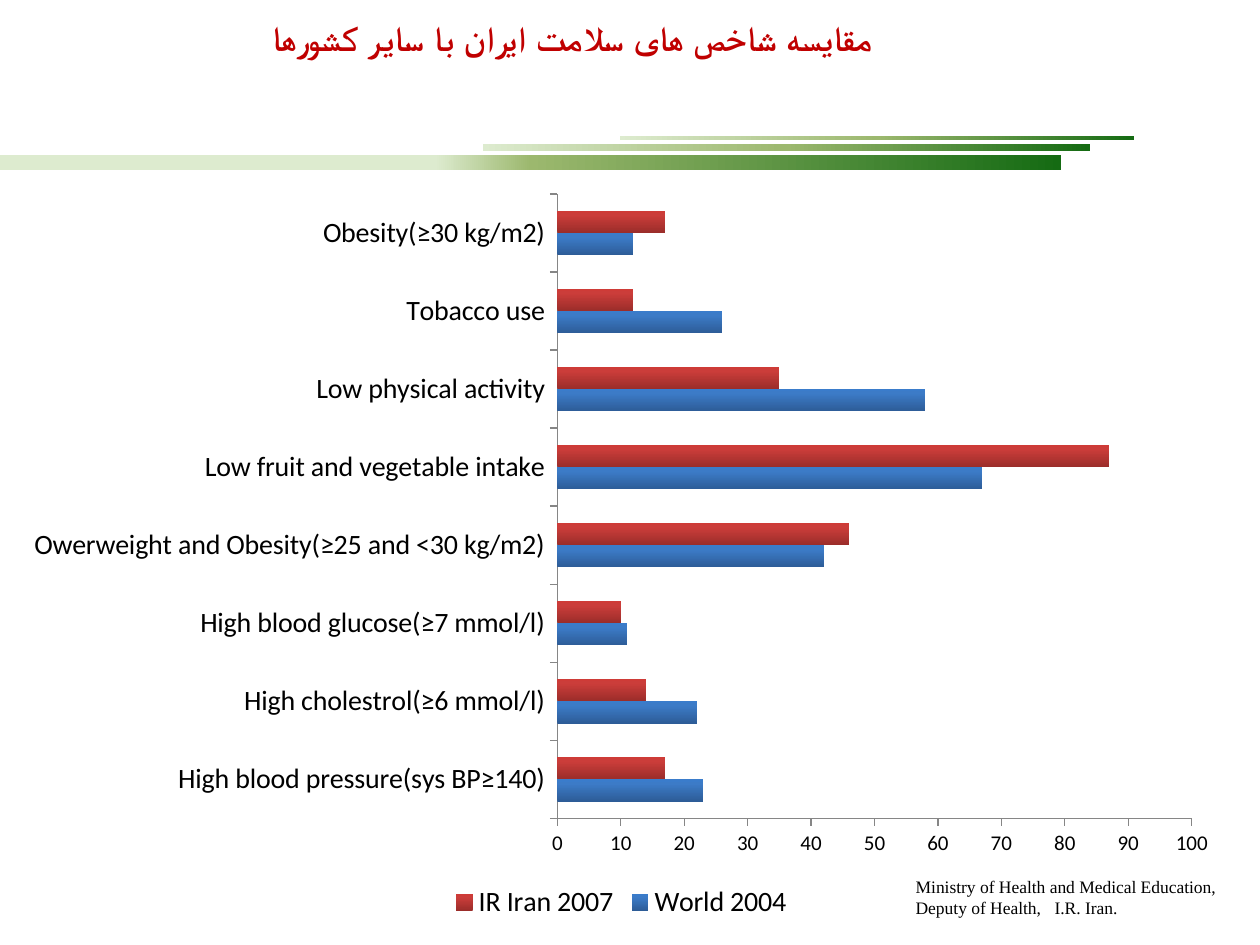
from pptx import Presentation
from pptx.chart.data import CategoryChartData
from pptx.dml.color import RGBColor
from pptx.enum.chart import XL_CHART_TYPE, XL_LEGEND_POSITION, XL_TICK_MARK
from pptx.enum.shapes import MSO_SHAPE
from pptx.enum.text import MSO_AUTO_SIZE, PP_ALIGN
from pptx.oxml import parse_xml
from pptx.oxml.ns import nsdecls
from pptx.util import Cm, Pt

BAR_CLUSTERED = XL_CHART_TYPE.BAR_CLUSTERED
LEGEND_BOTTOM = XL_LEGEND_POSITION.BOTTOM
TICK_OUTSIDE = XL_TICK_MARK.OUTSIDE
TICK_NONE = XL_TICK_MARK.NONE
RECTANGLE = MSO_SHAPE.RECTANGLE
GROW = MSO_AUTO_SIZE.SHAPE_TO_FIT_TEXT
LEFT, CENTER = PP_ALIGN.LEFT, PP_ALIGN.CENTER

COLORS = {
    "text": "000000", "title": "C00000", "axis": "868686",
    "pale": "DDEBCF", "olive": "9CB86E", "green": "156B13",
    "blue_dark": "2D5C97", "blue": "3C7BC7", "blue_light": "3A7CCB",
    "red_dark": "9B2D2A", "red": "CB3D3A", "red_light": "CE3B37",
}

STRIPES = [
    (12.5, 2.74, 10.36, 0.08, 0),
    (0, 3.12, 21.39, 0.3, 41),
    (9.73, 2.9, 12.24, 0.15, 0),
]

CATEGORIES = [
    "High blood pressure(sys BP≥140)",
    "High cholestrol(≥6 mmol/l)",
    "High blood glucose(≥7 mmol/l)",
    "Owerweight and Obesity(≥25 and <30 kg/m2)",
    "Low fruit and vegetable intake",
    "Low physical activity",
    "Tobacco use",
    "Obesity(≥30 kg/m2)",
]

SERIES = {
    "World 2004": ("blue", [23, 22, 11, 42, 67, 58, 26, 12]),
    "IR Iran 2007": ("red", [17, 14, 10, 46, 87, 35, 12, 17]),
}


def rgb(name):
    return RGBColor.from_string(COLORS[name])


def style_font(font, size, color="text", name="Calibri", bold=False):
    font.size = Pt(size)
    font.name = name
    font.bold = bold
    font.color.rgb = rgb(color)


def write_text(para, text, align=LEFT, rtl=False, tab=None, **style):
    para.alignment = align
    properties = para._p.get_or_add_pPr()
    if rtl:
        properties.set("rtl", "1")
    if tab:
        properties.append(parse_xml(
            f'<a:tabLst {nsdecls("a")}><a:tab pos="{Cm(tab)}" algn="l"/></a:tabLst>'))
    span = para.add_run()
    span.text = text
    style_font(span.font, **style)


def fill_gradient(fill, properties, stops, angle):
    fill.background()
    stop_xml = "".join(
        f'<a:gs pos="{position * 1000}"><a:srgbClr val="{COLORS[color]}"/></a:gs>'
        for position, color in stops)
    gradient = parse_xml(
        f'<a:gradFill {nsdecls("a")} rotWithShape="1"><a:gsLst>{stop_xml}</a:gsLst>'
        f'<a:lin ang="{angle * 60000}" scaled="0"/></a:gradFill>')
    properties.replace(properties.find("{*}noFill"), gradient)


class SlideBuilder:
    serif = "Times New Roman"

    def __init__(self, deck):
        self.slide = deck.slides.add_slide(deck.slide_layouts[6])

    def stripe(self, left, top, width, height, start):
        bar = self.slide.shapes.add_shape(
            RECTANGLE, Cm(left), Cm(top), Cm(width), Cm(height))
        bar.shadow.inherit = False
        stops = [(start, "pale"), (50, "olive"), (100, "green")]
        fill_gradient(bar.fill, bar._element.spPr, stops, 0)
        bar.line.fill.background()

    def text(self, left, top, width, height, lines, wrap=True, **style):
        box = self.slide.shapes.add_textbox(Cm(left), Cm(top), Cm(width), Cm(height))
        frame = box.text_frame
        frame.word_wrap = wrap
        frame.auto_size = GROW
        for index, line in enumerate(lines):
            para = frame.add_paragraph() if index else frame.paragraphs[0]
            write_text(para, line, name=self.serif, **style)

    def bar_chart(self, left, top, width, height):
        data = CategoryChartData()
        data.categories = CATEGORIES
        for name, (color, values) in SERIES.items():
            data.add_series(name, values)
        chart = self.slide.shapes.add_chart(
            BAR_CLUSTERED, Cm(left), Cm(top), Cm(width), Cm(height), data).chart
        style_font(chart.font, 10)
        chart.has_title = False
        chart.has_legend = True
        chart.legend.position = LEGEND_BOTTOM
        chart.legend.include_in_layout = False
        style_font(chart.legend.font, 16)
        for axis, size in ((chart.category_axis, 16), (chart.value_axis, 12)):
            axis.has_major_gridlines = False
            axis.major_tick_mark = TICK_OUTSIDE
            axis.minor_tick_mark = TICK_NONE
            axis.format.line.color.rgb = rgb("axis")
            style_font(axis.tick_labels.font, size)
        chart.value_axis.minimum_scale = 0
        chart.value_axis.maximum_scale = 100
        chart.value_axis.major_unit = 10
        plot = chart.plots[0]
        plot.gap_width = 150
        plot.overlap = 0
        plot.vary_by_categories = False
        for series in plot.series:
            color = SERIES[series.name][0]
            stops = [(0, f"{color}_dark"), (80, color), (100, f"{color}_light")]
            fill = series.format.fill
            fill_gradient(fill, series._element.spPr, stops, 270)
            series.invert_if_negative = False


def main():
    deck = Presentation()
    deck.slide_width, deck.slide_height = Cm(25.4), Cm(19.05)
    page = SlideBuilder(deck)
    for stripe in STRIPES:
        page.stripe(*stripe)
    page.text(18.21, 17.53, 6.65, 1.12,
              ["Ministry of Health and Medical Education,",
               "Deputy of Health,\tI.R. Iran."],
              wrap=False, size=10, tab=2.8)
    page.text(3.38, 0.2, 16.31, 1.12, ["مقایسه شاخص های سلامت ایران با سایر کشورها"],
              align=CENTER, rtl=True, size=20, color="title", bold=True)
    page.bar_chart(0.2, 3.61, 24.64, 15.04)
    deck.save("out.pptx")


if __name__ == "__main__":
    main()
